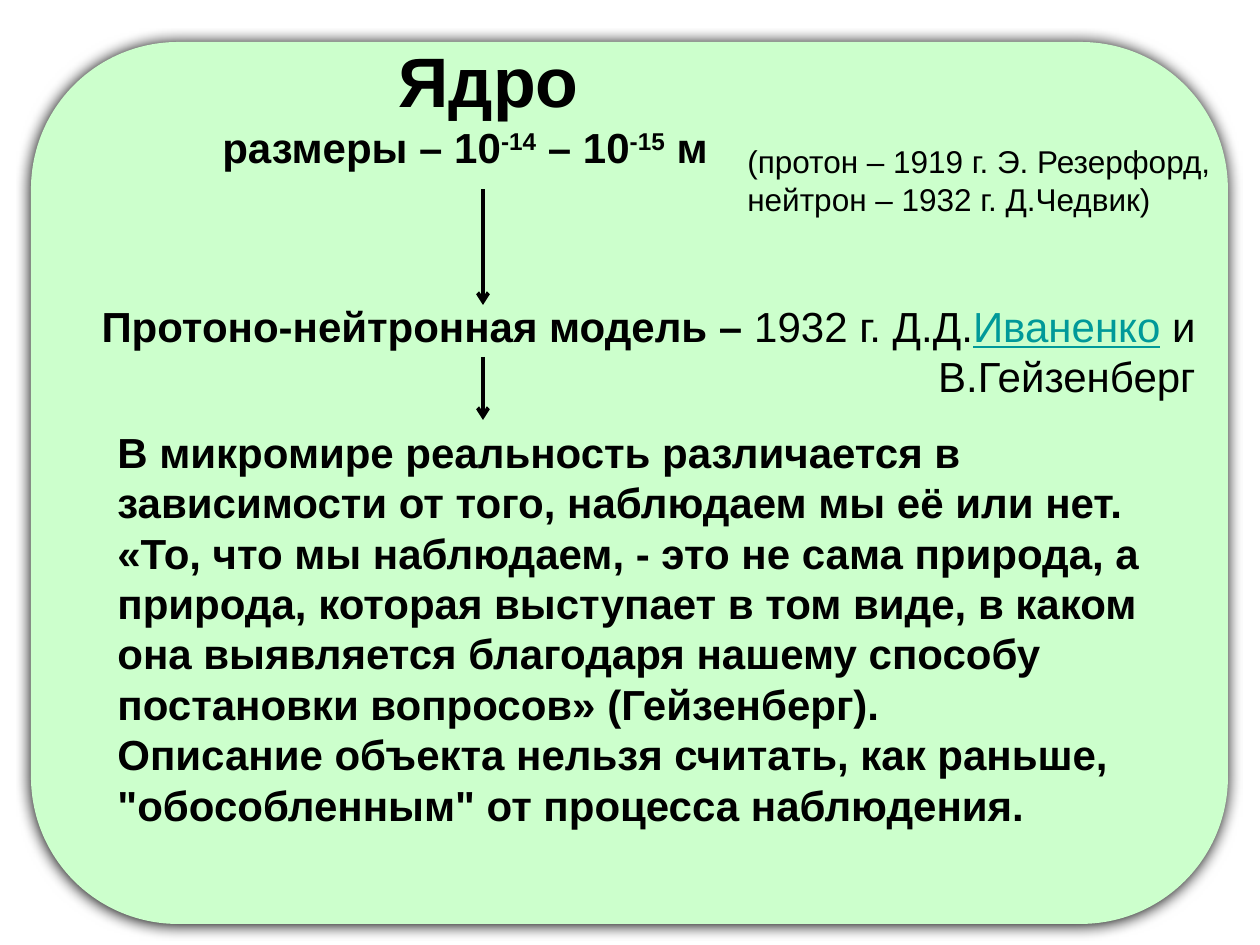
from lxml import etree
from pptx import Presentation
from pptx.dml.color import RGBColor
from pptx.enum.shapes import MSO_CONNECTOR, MSO_SHAPE
from pptx.enum.text import MSO_AUTO_SIZE, PP_ALIGN
from pptx.oxml.ns import qn
from pptx.util import Emu, Pt

ROUNDED = MSO_SHAPE.ROUNDED_RECTANGLE
STRAIGHT = MSO_CONNECTOR.STRAIGHT
GROW = MSO_AUTO_SIZE.SHAPE_TO_FIT_TEXT
LEFT, CENTER, RIGHT = PP_ALIGN.LEFT, PP_ALIGN.CENTER, PP_ALIGN.RIGHT
BLACK, TEAL, MINT = "000000", "009999", "CCFFCC"


def px(value):
    return Emu(round(value * 914400 / 126))


def color(hex_value):
    return RGBColor.from_string(hex_value)


presentation = Presentation()
presentation.slide_width, presentation.slide_height = px(1260), px(945)
slide = presentation.slides.add_slide(presentation.slide_layouts[6])

panel = slide.shapes.add_shape(ROUNDED, px(31), px(42), px(1197), px(882))
panel.fill.solid()
panel.fill.fore_color.rgb = color(MINT)
panel.line.fill.background()
panel.shadow.inherit = False
effects = panel._element.spPr.find(qn("a:effectLst"))
shadow = etree.SubElement(effects, qn("a:outerShdw"), blurRad=str(Pt(8.5)),
                          dist=str(Pt(1)), dir="5400000", algn="ctr", rotWithShape="0")
etree.SubElement(shadow, qn("a:srgbClr"), val=BLACK)

bold, plain = {"bold": True}, {}
raised = {"bold": True, "raised": True}
linked = {"color": TEAL, "underline": True}

text_boxes = [
    ((210, 31, 557, 149), [
        (CENTER, 40, [("Ядро", bold)]),
        (LEFT, 24, [("размеры – 10", bold), ("-14", raised), (" – 10", bold),
                    ("-15", raised), (" м", bold)]),
    ]),
    ((84, 294, 1124, 115), [
        (RIGHT, 24, [("Протоно-нейтронная модель – ", bold), ("1932 г. Д.Д.", plain),
                     ("Иваненко", linked), (" и В.Гейзенберг", plain)]),
    ]),
    ((735, 136, 504, 89), [
        (LEFT, 18, [("(протон – 1919 г. Э. Резерфорд, нейтрон – 1932 г. Д.Чедвик)", plain)]),
    ]),
    ((105, 420, 1103, 420), [
        (LEFT, 24, [("В микромире реальность различается в зависимости от того, "
                     "наблюдаем мы её или нет. «То, что мы наблюдаем, - это не сама "
                     "природа, а природа, которая выступает в том виде, в каком она "
                     "выявляется благодаря нашему способу постановки вопросов» "
                     "(Гейзенберг).", bold)]),
        (LEFT, 24, [("Описание объекта нельзя считать, как раньше, "
                     "\"обособленным\" от процесса наблюдения.", bold)]),
    ]),
]

for box, paragraphs in text_boxes:
    text_frame = slide.shapes.add_textbox(*map(px, box)).text_frame
    text_frame.word_wrap = True
    text_frame.auto_size = GROW
    for index, (alignment, size, pieces) in enumerate(paragraphs):
        paragraph = text_frame.add_paragraph() if index else text_frame.paragraphs[0]
        paragraph.alignment = alignment
        for text, style in pieces:
            run = paragraph.add_run()
            run.text = text
            run.font.name = "Arial"
            run.font.size = Pt(size)
            run.font.bold = style.get("bold", False)
            run.font.underline = style.get("underline", False)
            run.font.color.rgb = color(style.get("color", BLACK))
            if style.get("raised"):
                run._r.get_or_add_rPr().set("baseline", "30000")

for top, bottom in [(189, 305), (357, 420)]:
    arrow = slide.shapes.add_connector(STRAIGHT, px(483), px(top), px(483), px(bottom))
    arrow.line.color.rgb = color(BLACK)
    arrow.line.width = Pt(2.25)
    etree.SubElement(arrow.line._get_or_add_ln(), qn("a:tailEnd"), type="arrow")
    etree.SubElement(arrow._element.spPr, qn("a:effectLst"))

presentation.save("out.pptx")
